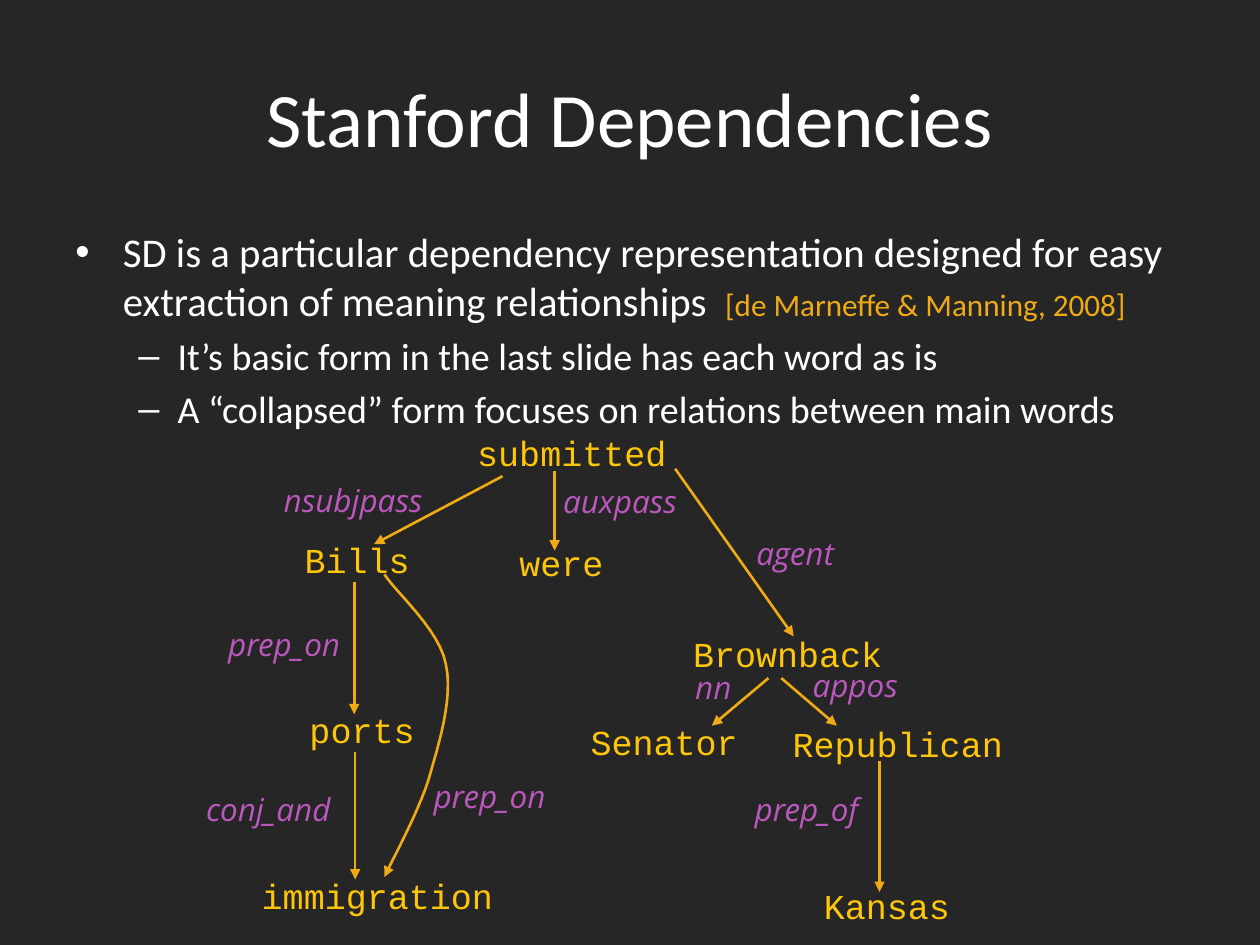
from lxml.etree import SubElement
from pptx import Presentation
from pptx.dml.color import RGBColor
from pptx.enum.shapes import MSO_CONNECTOR
from pptx.enum.text import MSO_ANCHOR, MSO_AUTO_SIZE, PP_ALIGN
from pptx.oxml.ns import qn
from pptx.util import Cm, Pt

COLORS = {"back": "262626", "text": "FFFFFF", "accent": "EFAB16",
          "word": "FEC60B", "relation": "BB57BD"}

# word, centre x, centre y (cm)
WORDS = [
    ("submitted", 11.53, 9.12), ("Bills", 7.2, 11.28), ("were", 11.32, 11.33),
    ("Brownback", 15.88, 13.18), ("Senator", 13.39, 14.94),
    ("Republican", 18.1, 14.99), ("ports", 7.3, 14.71),
    ("immigration", 7.61, 18.06), ("Kansas", 17.88, 18.26),
]
# relation, centre x, centre y, width (cm)
RELATIONS = [
    ("nsubjpass", 7.12, 10.07, 3.68), ("auxpass", 12.5, 10.09, 3.1),
    ("agent", 16.03, 11.14, 2.39), ("prep_on", 5.73, 12.99, 3.05),
    ("nn", 14.38, 13.84, 1.35), ("appos", 17.24, 13.81, 2.39),
    ("conj_and", 5.41, 16.31, 3.4), ("prep_on", 9.87, 16.04, 3.18),
    ("prep_of", 16.26, 16.31, 3),
]
# x1, y1, x2, y2 (cm)
ARROWS = [
    (10.13, 9.6, 7.54, 10.97), (11.18, 9.5, 11.18, 11.1),
    (13.61, 9.45, 16, 12.83), (7.14, 11.73, 7.14, 14.4),
    (15.49, 13.67, 14.35, 14.63), (15.75, 13.67, 16.87, 14.63),
    (7.16, 15.16, 7.16, 17.73), (17.73, 15.34, 17.73, 17.98),
]
# Bezier knots and handles from Bills to immigration (cm)
CURVE = [
    (7.75, 11.58), (8, 11.96), (8.86, 12.7), (8.99, 13.39), (9.14, 14.1),
    (8.84, 15.01), (8.64, 15.72), (8.41, 16.43), (7.9, 17.35), (7.75, 17.68),
]
BULLETS = [
    (0, [("SD is a particular dependency representation designed for easy "
          "extraction of meaning relationships  ", 23.3, "text"),
         ("[de Marneffe & Manning, 2008]", 17.8, "accent")]),
    (1, [("It’s basic form in the last slide has each word as is", 21.7, "text")]),
    (1, [("A “collapsed” form focuses on relations between main words", 21.7, "text")]),
]
# bullet, left margin (cm), hanging indent (cm), space before (pt)
LEVELS = [("•", 0.96, 0.96, 10), ("–", 2.06, 0.79, 4.3)]


def bezier(points, steps=12):
    """Sample a chain of cubic curves that share their end knots."""
    result = [points[0]]
    for i in range(0, len(points) - 1, 3):
        for step in range(1, steps + 1):
            t = step / steps
            weights = ((1 - t) ** 3, 3 * t * (1 - t) ** 2, 3 * t * t * (1 - t), t ** 3)
            result.append(tuple(sum(w * pt[axis] for w, pt in zip(weights, points[i:i + 4]))
                                for axis in (0, 1)))
    return result


class DependencySlide:
    def __init__(self, prs):
        self.s = prs.slides.add_slide(prs.slide_layouts[5])
        fill = self.s.background.fill
        fill.solid()
        fill.fore_color.rgb = RGBColor.from_string(COLORS["back"])

    def style(self, r, font, size, color, italic=False):
        r.font.name = font
        r.font.size = Pt(size)
        r.font.italic = italic
        r.font.color.rgb = RGBColor.from_string(COLORS[color])

    def title(self, text):
        sp = self.s.shapes.title
        sp.left, sp.top, sp.width, sp.height = Cm(1.27), Cm(0.76), Cm(22.86), Cm(3.18)
        tf = sp.text_frame
        tf.text = text
        tf.vertical_anchor = MSO_ANCHOR.MIDDLE
        p = tf.paragraphs[0]
        p.alignment = PP_ALIGN.CENTER
        self.style(p.runs[0], "Calibri", 44, "text")

    def bullets(self, items):
        tf = self.s.shapes.add_textbox(Cm(1.27), Cm(4.45), Cm(22.86), Cm(4.6)).text_frame
        tf.word_wrap = True
        for i, (level, runs) in enumerate(items):
            p = tf.add_paragraph() if i else tf.paragraphs[0]
            char, margin, hang, before = LEVELS[level]
            p.level = level
            p.space_before = Pt(before)
            for text, size, color in runs:
                r = p.add_run()
                r.text = text
                self.style(r, "Calibri", size, color)
            pPr = p._p.get_or_add_pPr()
            pPr.set("marL", str(Cm(margin)))
            pPr.set("indent", str(-Cm(hang)))
            SubElement(SubElement(pPr, qn("a:buClr")), qn("a:srgbClr"), val=COLORS["text"])
            SubElement(pPr, qn("a:buFont"), typeface="Arial")
            SubElement(pPr, qn("a:buChar"), char=char)

    def label(self, text, x, y, width, font, size, color, italic=False):
        """Put one centred line of text around the point x, y."""
        height = 1.02
        sp = self.s.shapes.add_textbox(Cm(x - width / 2), Cm(y - height / 2),
                                       Cm(width), Cm(height))
        tf = sp.text_frame
        tf.text = text
        tf.word_wrap = False
        tf.auto_size = MSO_AUTO_SIZE.SHAPE_TO_FIT_TEXT
        tf.vertical_anchor = MSO_ANCHOR.MIDDLE
        p = tf.paragraphs[0]
        p.alignment = PP_ALIGN.CENTER
        self.style(p.runs[0], font, size, color, italic)

    def word(self, text, x, y):
        self.label(text, x, y, 0.6 + 0.43 * len(text), "Courier New", 20, "word")

    def relation(self, text, x, y, width):
        self.label(text, x, y, width, "Open Sans", 18, "relation", italic=True)

    def arrow_line(self, sp):
        sp.line.color.rgb = RGBColor.from_string(COLORS["accent"])
        sp.line.width = Pt(1.5)
        SubElement(sp.element.spPr.find(qn("a:ln")), qn("a:tailEnd"), type="triangle")

    def arrow(self, x1, y1, x2, y2):
        sp = self.s.shapes.add_connector(MSO_CONNECTOR.STRAIGHT,
                                         Cm(x1), Cm(y1), Cm(x2), Cm(y2))
        self.arrow_line(sp)
        SubElement(sp.element.spPr, qn("a:effectLst"))

    def curved_arrow(self, knots):
        start, *rest = [(Cm(x), Cm(y)) for x, y in bezier(knots)]
        builder = self.s.shapes.build_freeform(*start)
        builder.add_line_segments(rest, close=False)
        sp = builder.convert_to_shape()
        sp.fill.background()
        self.arrow_line(sp)
        sp.shadow.inherit = False


def main():
    prs = Presentation()
    prs.slide_width, prs.slide_height = Cm(25.4), Cm(19.05)
    slide = DependencySlide(prs)
    slide.title("Stanford Dependencies")
    slide.bullets(BULLETS)
    for arrow in ARROWS:
        slide.arrow(*arrow)
    slide.curved_arrow(CURVE)
    for word in WORDS:
        slide.word(*word)
    for relation in RELATIONS:
        slide.relation(*relation)
    prs.save("out.pptx")


if __name__ == "__main__":
    main()
